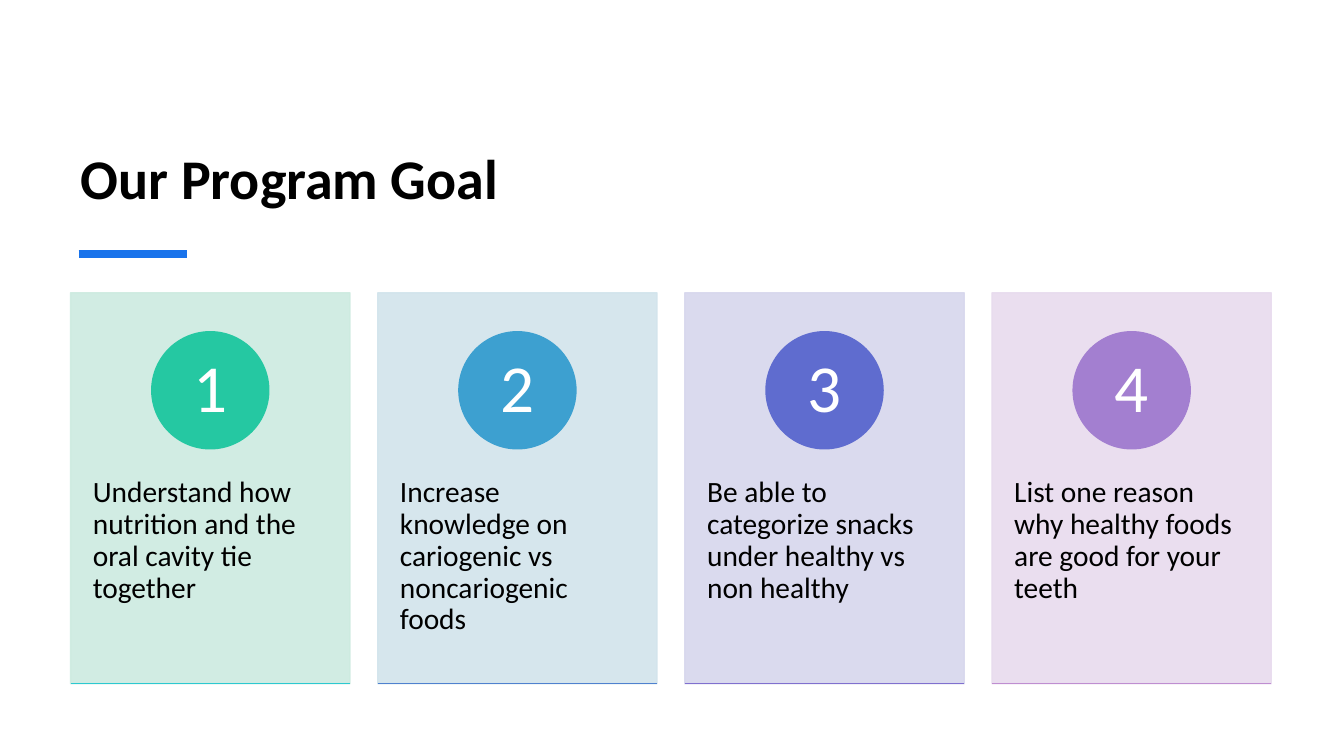
"""Build the slide that lists the four program goals as numbered cards."""
from lxml.etree import SubElement
from pptx import Presentation
from pptx.dml.color import RGBColor
from pptx.enum.shapes import MSO_CONNECTOR as CONN, MSO_SHAPE as SHAPE
from pptx.enum.text import MSO_ANCHOR as ANCHOR, PP_ALIGN as ALIGN
from pptx.oxml.ns import qn
from pptx.util import Cm, Pt

COLORS = {"text": "000000", "number": "FFFFFF", "accent": "1973EB"}
GOALS = [
    ("Understand how nutrition and the oral cavity tie together",
     {"card": "CDEBE0", "circle": "25C8A2", "base": "2CC9D1"}),
    ("Increase knowledge on cariogenic vs noncariogenic foods",
     {"card": "D2E4EC", "circle": "3DA0D0", "base": "4F81CF"}),
    ("Be able to categorize snacks under healthy vs non healthy",
     {"card": "D7D7ED", "circle": "5F6CCF", "base": "8070CF"}),
    ("List one reason why healthy foods are good for your teeth",
     {"card": "E8DBEE", "circle": "A37FD0", "base": "BF8ED1"}),
]
LEFT, PITCH = 1.78, 7.74
CARD_TOP, CARD_W, CARD_H = 7.38, 7.04, 9.85
CIRCLE_TOP, CIRCLE_D = 8.36, 2.95

TITLE_FONT = {"name": "Calibri", "size": Pt(40), "bold": True}
GOAL_FONT = {"name": "Calibri", "size": Pt(21)}
NUMBER_FONT = {"name": "Calibri", "size": Pt(48)}
GOAL_FRAME = {"margin_left": Cm(0.56), "margin_right": Cm(0.56),
              "margin_top": Cm(4.65), "margin_bottom": Cm(0.9),
              "vertical_anchor": ANCHOR.TOP, "word_wrap": True}
NUMBER_FRAME = {"margin_left": Cm(0.23), "margin_right": Cm(0.23),
                "margin_top": Cm(0.03), "margin_bottom": Cm(0.03),
                "vertical_anchor": ANCHOR.MIDDLE, "word_wrap": True}


def apply(target, values):
    for name, value in values.items():
        setattr(target, name, value)


def write(sp, text, frame, para, font, color):
    tf = sp.text_frame
    apply(tf, frame)
    p = tf.paragraphs[0]
    apply(p, para)
    r = p.add_run()
    r.text = text
    apply(r.font, font)
    r.font.color.rgb = RGBColor.from_string(color)


def add_shape(s, kind, box, color, opacity=100):
    sp = s.shapes.add_shape(kind, *map(Cm, box))
    sp.shadow.inherit = False
    sp.fill.solid()
    sp.line.width = Pt(1)
    for fill in (sp.fill, sp.line.fill):
        fill.solid()
        fill.fore_color.rgb = RGBColor.from_string(color)
    if opacity < 100:
        for clr in sp.element.spPr.iter(qn("a:srgbClr")):
            SubElement(clr, qn("a:alpha"), val=str(opacity * 1000))
    return sp


def add_rule(s, x, y, length, color, width):
    line = s.shapes.add_connector(CONN.STRAIGHT, Cm(x), Cm(y), Cm(x + length), Cm(y))
    line.line.color.rgb = RGBColor.from_string(color)
    line.line.width = Pt(width)
    SubElement(line.element.spPr, qn("a:effectLst"))


def add_title(s, text):
    sp = s.shapes.title
    apply(sp, {"left": Cm(LEFT), "top": Cm(1.57), "width": Cm(30.25), "height": Cm(3.86)})
    write(sp, text, {"vertical_anchor": ANCHOR.BOTTOM, "word_wrap": True},
          {"alignment": ALIGN.LEFT}, TITLE_FONT, COLORS["text"])


def add_goal(s, index, text, colors):
    x = LEFT + index * PITCH
    card = add_shape(s, SHAPE.RECTANGLE, (x, CARD_TOP, CARD_W, CARD_H), colors["card"], 90)
    write(card, text, GOAL_FRAME, {"alignment": ALIGN.LEFT, "line_spacing": 0.9},
          GOAL_FONT, COLORS["text"])
    circle_box = (x + (CARD_W - CIRCLE_D) / 2, CIRCLE_TOP, CIRCLE_D, CIRCLE_D)
    circle = add_shape(s, SHAPE.OVAL, circle_box, colors["circle"])
    write(circle, str(index + 1), NUMBER_FRAME,
          {"alignment": ALIGN.CENTER, "line_spacing": 0.9}, NUMBER_FONT, COLORS["number"])
    add_rule(s, x, CARD_TOP + CARD_H, CARD_W, colors["base"], 1)


def main():
    prs = Presentation()
    prs.slide_width, prs.slide_height = Cm(33.87), Cm(19.05)
    s = prs.slides.add_slide(prs.slide_layouts[5])
    add_title(s, "Our Program Goal")
    add_rule(s, 1.98, 6.4, 2.72, COLORS["accent"], 6)
    for index, (text, colors) in enumerate(GOALS):
        add_goal(s, index, text, colors)
    prs.save("out.pptx")


if __name__ == "__main__":
    main()
